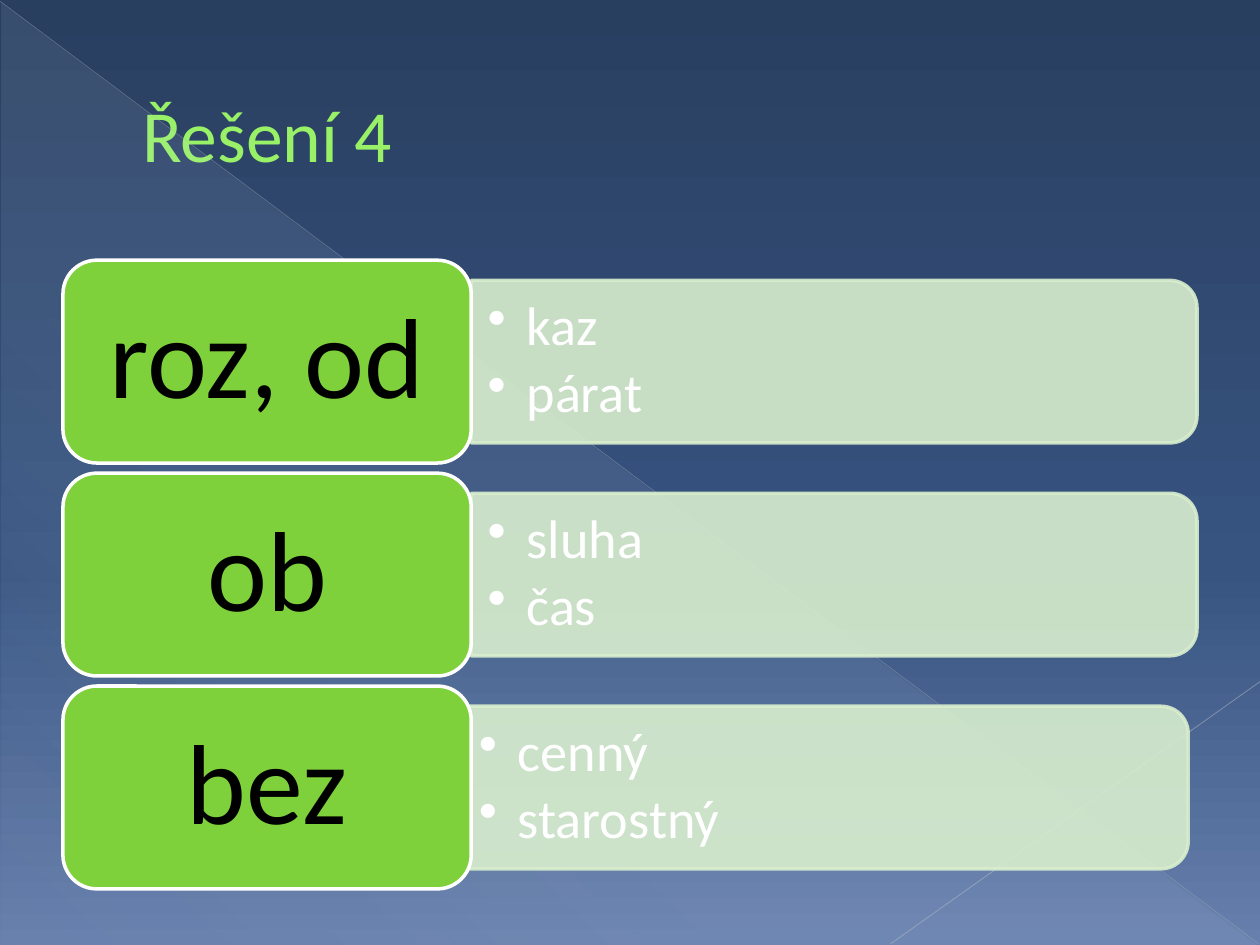
from lxml import etree
from pptx import Presentation
from pptx.dml.color import RGBColor
from pptx.enum import shapes, text
from pptx.oxml.ns import qn
from pptx.util import Inches, Pt

# Content: prefixes, the words they join, horizontal shift of the bar
ROWS = [
    ("roz, od", ["kaz", "párat"], 0),
    ("ob", ["sluha", "čas"], 0),
    ("bez", ["cenný", "starostný"], -0.07),
]
TITLE = "Řešení 4"
FONT = "Calibri"

GREEN = RGBColor(0x7F, 0xD1, 0x3B)
LIGHT_GREEN = RGBColor(0x98, 0xF1, 0x67)
PALE_GREEN = RGBColor(0xD8, 0xEE, 0xCE)
WHITE = RGBColor(0xFF, 0xFF, 0xFF)
BLACK = RGBColor(0, 0, 0)

# Stops: position %, colour, opacity %
SKY = [(0, "293F60", 100), (60, "375380", 100), (100, "667FAC", 100)]
GLOW = [(0, "D6ECFF", 10), (70, "D6ECFF", 8), (100, "D6ECFF", 1)]
# Start, end, colour, width, opacity %
RAYS = [
    ((0, 0.01), (9.99, 7.49), RGBColor(0xB7, 0xBC, 0xC5), 0.39, 35),
    ((10, 5.41), (7.07, 7.49), RGBColor(0xBF, 0xC3, 0xCB), 0.47, 45),
]

# Rows of the list, in inches
LEFT, LABEL_W, LABEL_H = 0.5, 3.24, 1.61
BAR_W, BAR_H = 5.76, 1.29
FIRST_CENTRE, PITCH = 2.87, 1.69


def set_opacity(element, percent):
    for colour in element.iter(qn("a:srgbClr")):
        etree.SubElement(colour, qn("a:alpha"), val=str(percent * 1000))


def set_gradient(fill, owner, stops, angle):
    fill.gradient()
    gradient = owner.find(".//" + qn("a:gradFill"))
    for child in list(gradient):
        gradient.remove(child)
    stop_list = etree.SubElement(gradient, qn("a:gsLst"))
    for position, colour, opacity in stops:
        stop = etree.SubElement(stop_list, qn("a:gs"), pos=str(position * 1000))
        etree.SubElement(stop, qn("a:srgbClr"), val=colour)
        set_opacity(stop, opacity)
    etree.SubElement(gradient, qn("a:lin"), ang=str(angle * 60000), scaled="0")


def add_box(kind, x, y, w, h):
    box = slide.shapes.add_shape(kind, *map(Inches, (x, y, w, h)))
    box.shadow.inherit = False
    return box


def paint(box, fill, line):
    box.fill.solid()
    box.fill.fore_color.rgb = fill
    box.line.color.rgb = line
    box.line.width = Pt(2)


def set_frame(frame, inset_x, inset_y):
    frame.word_wrap = True
    frame.auto_size = text.MSO_AUTO_SIZE.NONE
    frame.vertical_anchor = text.MSO_ANCHOR.MIDDLE
    frame.margin_left = frame.margin_right = Inches(inset_x)
    frame.margin_top = frame.margin_bottom = Inches(inset_y)


def set_font(paragraph, size, colour):
    paragraph.font.name = FONT
    paragraph.font.size = Pt(size)
    paragraph.font.color.rgb = colour


def add_bullet(paragraph):
    properties = paragraph._p.get_or_add_pPr()
    properties.set("marL", str(Inches(0.31)))
    properties.set("indent", str(-Inches(0.31)))
    bullet = etree.Element(qn("a:buChar"), char="•")
    run_defaults = properties.find(qn("a:defRPr"))
    run_defaults.addprevious(bullet)


prs = Presentation()
prs.slide_width, prs.slide_height = Inches(10), Inches(7.5)
slide = prs.slides.add_slide(prs.slide_layouts[5])

# Background with a light triangle and two thin rays
set_gradient(slide.background.fill, slide._element, SKY, 90)
glow = add_box(shapes.MSO_SHAPE.RIGHT_TRIANGLE, 0.01, 0.02, 9.98, 7.48)
set_gradient(glow.fill, glow._element, GLOW, 133)
glow.line.fill.background()
for start, end, colour, width, opacity in RAYS:
    ray = slide.shapes.add_connector(
        shapes.MSO_CONNECTOR.STRAIGHT, *map(Inches, start + end))
    ray.line.color.rgb = colour
    ray.line.width = Pt(width)
    set_opacity(ray._element.spPr, opacity)
    etree.SubElement(ray._element.spPr, qn("a:effectLst"))

# Title
title = slide.shapes.title
title.left, title.top, title.width, title.height = map(Inches, (0.5, 0.29, 9, 1.53))
title.text_frame.text = TITLE
set_frame(title.text_frame, 0.1, 0.05)
heading = title.text_frame.paragraphs[0]
heading.alignment = text.PP_ALIGN.LEFT
heading._p.get_or_add_pPr().set("marL", str(Inches(0.53)))
set_font(heading, 42, LIGHT_GREEN)

# Rows: a bar with words behind a prefix label
for row, (prefix, words, shift) in enumerate(ROWS):
    centre = FIRST_CENTRE + row * PITCH
    bar_left = LEFT + LABEL_W + shift

    # The bar is an upright shape turned a quarter about its centre
    bar = add_box(shapes.MSO_SHAPE.ROUND_2_SAME_RECTANGLE,
                  bar_left + (BAR_W - BAR_H) / 2, centre - BAR_W / 2, BAR_H, BAR_W)
    bar.rotation = 90
    paint(bar, PALE_GREEN, PALE_GREEN)
    set_opacity(bar._element.spPr, 90)

    word_list = slide.shapes.add_textbox(
        *map(Inches, (bar_left, centre - 0.58, BAR_W - 0.06, 1.16))).text_frame
    set_frame(word_list, 0.13, 0.06)
    word_list.text = "\n".join(words)
    for item in word_list.paragraphs:
        item.line_spacing = 0.9
        item.space_after = Pt(4.65)
        set_font(item, 31, WHITE)
        add_bullet(item)

    label = add_box(shapes.MSO_SHAPE.ROUNDED_RECTANGLE,
                    LEFT, centre - LABEL_H / 2, LABEL_W, LABEL_H)
    paint(label, GREEN, WHITE)
    set_frame(label.text_frame, 0.27, 0.14)
    label.text_frame.text = prefix
    prefix_line = label.text_frame.paragraphs[0]
    prefix_line.alignment = text.PP_ALIGN.CENTER
    prefix_line.line_spacing = 0.9
    set_font(prefix_line, 65, BLACK)

prs.save("out.pptx")
